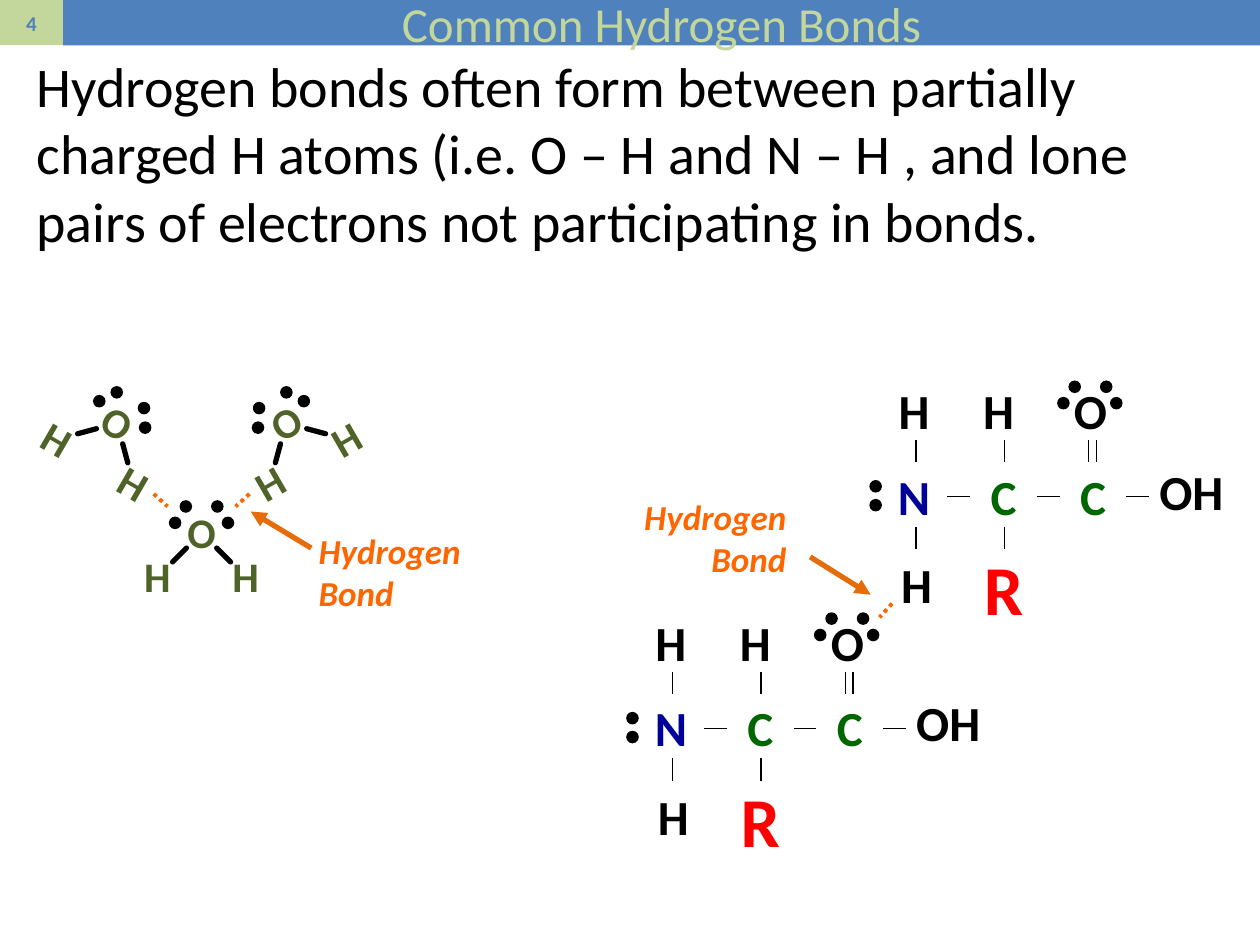
from math import cos, radians, sin

from pptx import Presentation
from pptx.dml.color import RGBColor
from pptx.enum.dml import MSO_LINE
from pptx.enum.shapes import MSO_CONNECTOR, MSO_SHAPE
from pptx.enum.text import MSO_ANCHOR, MSO_AUTO_SIZE, PP_ALIGN
from pptx.oxml.ns import qn
from pptx.util import Inches, Pt
from lxml import etree

BLACK = RGBColor(0x00, 0x00, 0x00)
BLUE = RGBColor(0x4F, 0x81, 0xBD)
LIME = RGBColor(0xC3, 0xD6, 0x9B)
OLIVE = RGBColor(0x4F, 0x62, 0x28)
ORANGE = RGBColor(0xFF, 0x66, 0x00)
ARROW = RGBColor(0xE4, 0x6C, 0x0A)
RED = RGBColor(0xFF, 0x00, 0x00)
GREEN = RGBColor(0x00, 0x66, 0x00)
NAVY = RGBColor(0x00, 0x00, 0x99)

LEFT, CENTER, RIGHT = PP_ALIGN.LEFT, PP_ALIGN.CENTER, PP_ALIGN.RIGHT
TOP, MIDDLE = MSO_ANCHOR.TOP, MSO_ANCHOR.MIDDLE
DOTTED = MSO_LINE.ROUND_DOT
DOT = 0.1


def place(sp, left, top, width, height):
    box = {"left": left, "top": top, "width": width, "height": height}
    for name, value in box.items():
        setattr(sp, name, Inches(value))


def write(sp, text, color, size, align=CENTER, anchor=MIDDLE, **font):
    tf = sp.text_frame
    tf.word_wrap = True
    tf.auto_size = MSO_AUTO_SIZE.NONE
    tf.vertical_anchor = anchor
    p = tf.paragraphs[0]
    p.alignment = align
    p.space_before = Pt(0)
    r = p.add_run()
    r.text = text
    r.font.color.rgb = color
    for name, value in {"name": "Calibri", "size": Pt(size), **font}.items():
        setattr(r.font, name, value)


def add_label(slide, text, box, color, size, rotation=0, **style):
    sp = slide.shapes.add_textbox(*map(Inches, box))
    sp.rotation = rotation
    write(sp, text, color, size, bold=True, **style)


def add_fill(slide, kind, box, color):
    sp = slide.shapes.add_shape(kind, *map(Inches, box))
    sp.shadow.inherit = False
    sp.fill.solid()
    sp.fill.fore_color.rgb = color
    sp.line.fill.background()
    return sp


def add_electron(slide, x, y):
    """Draw one electron centred on x, y."""
    add_fill(slide, MSO_SHAPE.OVAL, (x - DOT / 2, y - DOT / 2, DOT, DOT), BLACK)


def add_line(slide, start, end, color=BLACK, width=0.75, dash=None, arrow=False, cap="flat"):
    line = slide.shapes.add_connector(MSO_CONNECTOR.STRAIGHT, *map(Inches, (*start, *end)))
    line.line.color.rgb = color
    line.line.width = Pt(width)
    if dash:
        line.line.dash_style = dash
    ln = line.get_or_add_ln()
    ln.set("cap", cap)
    if arrow:
        etree.SubElement(ln, qn("a:tailEnd"), type="triangle")
    etree.SubElement(line._element.spPr, qn("a:effectLst"))


def add_header(slide, number, title):
    corner = add_fill(slide, MSO_SHAPE.RECTANGLE, (0, 0, 0.5, 0.36), LIME)
    write(corner, number, BLUE, 12, bold=True)
    sp = slide.shapes.title
    place(sp, 0.5, 0, 9.5, 0.36)
    sp.fill.solid()
    sp.fill.fore_color.rgb = BLUE
    write(sp, title, LIME, 28)


def add_body(slide, text):
    sp = slide.placeholders[1]
    place(sp, 0.19, 0.36, 9.43, 1.72)
    write(sp, text, BLACK, 32, align=LEFT, anchor=TOP)
    pPr = sp.text_frame.paragraphs[0]._p.get_or_add_pPr()
    pPr.set("marL", "0")
    pPr.set("indent", "0")
    etree.SubElement(pPr, qn("a:buNone"))


def add_water(slide, x, y, angle=0):
    """Draw a water molecule turned clockwise by angle about its oxygen at x, y."""
    c, s = cos(radians(angle)), sin(radians(angle))

    def turn(dx, dy):
        return x + dx * c - dy * s, y + dx * s + dy * c

    for text, dx, dy in (("O", 0, 0), ("H", 0.35, 0.35), ("H", -0.35, 0.35)):
        ax, ay = turn(dx, dy)
        add_label(slide, text, (ax - 0.265, ay - 0.22, 0.53, 0.44), OLIVE, 24, angle)
    for side in (-1, 1):
        add_line(slide, turn(side * 0.23, 0.24), turn(side * 0.12, 0.13), width=3, cap="rnd")
        for dx, dy in ((0.21, -0.07), (0.125, -0.2)):
            add_electron(slide, *turn(side * dx, dy))


def add_amino_acid(slide, left, top):
    atoms = (
        ("H", 0, 0, BLACK), ("H", 0.67, 0, BLACK), ("O", 1.4, 0, BLACK),
        ("N", 0, 0.68, NAVY), ("C", 0.71, 0.68, GREEN), ("C", 1.42, 0.68, GREEN),
        ("H", 0.02, 1.38, BLACK), ("R", 0.71, 1.31, RED), ("OH", 2.13, 0.64, BLACK),
    )
    for text, dx, dy, color in atoms:
        size = 40 if text == "R" else 28
        width = 0.91 if text == "OH" else 0.77
        add_label(slide, text, (left + dx, top + dy, width, 0.78), color, size, anchor=TOP)
    for i in range(3):
        x, y = left + 0.65 + 0.71 * i, top + 0.97
        add_line(slide, (x, y), (x + 0.18, y))
    for dy, columns in ((0.52, (0.4, 1.1, 1.77, 1.83)), (1.21, (0.4, 1.1))):
        for dx in columns:
            x, y = left + dx, top + dy
            add_line(slide, (x, y), (x, y + 0.18))
    electrons = ((0.08, 0.89), (0.08, 1.04), (1.57, 0.23), (1.66, 0.1), (1.91, 0.1), (1.99, 0.23))
    for dx, dy in electrons:
        add_electron(slide, left + dx, top + dy)


def add_hydrogen_bond(slide, start, end):
    add_line(slide, start, end, ORANGE, 2.25, DOTTED)


def add_callout(slide, left, top, align, start, end):
    box = (left, top, 1.87, 0.77)
    add_label(slide, "Hydrogen Bond", box, ORANGE, 20, align=align, anchor=TOP, italic=True)
    add_line(slide, start, end, ARROW, 3, arrow=True)


def add_water_cluster(slide, x, y):
    """Draw three waters, mirrored about x, with the lowest oxygen at x, y."""
    add_water(slide, x, y)
    for side in (-1, 1):
        add_water(slide, x + side * 0.665, y - 0.87, -30 * side)
        add_hydrogen_bond(slide, (x + side * 0.38, y - 0.3), (x + side * 0.27, y - 0.2))
    add_callout(slide, x + 0.83, y - 0.07, LEFT, (x + 0.87, y + 0.13), (x + 0.39, y - 0.16))


def add_amino_acid_pair(slide, left, top):
    """Draw two amino acids, the upper one at left, top."""
    add_amino_acid(slide, left - 1.93, top + 1.84)
    add_amino_acid(slide, left, top)
    add_hydrogen_bond(slide, (left + 0.21, top + 1.82), (left + 0.11, top + 1.93))
    add_callout(slide, left - 2.4, top + 0.91, RIGHT,
                (left - 0.44, top + 1.45), (left + 0.04, top + 1.75))


def main():
    prs = Presentation()
    prs.slide_width, prs.slide_height = Inches(10), Inches(7.5)
    slide = prs.slides.add_slide(prs.slide_layouts[1])
    add_header(slide, "4", "Common Hydrogen Bonds")
    add_body(slide, "Hydrogen bonds often form between partially charged H atoms "
                    "(i.e. O – H and N – H , and lone pairs of electrons "
                    "not participating in bonds.")
    add_water_cluster(slide, 1.6, 4.22)
    add_amino_acid_pair(slide, 6.87, 2.97)
    prs.save("out.pptx")


if __name__ == "__main__":
    main()
